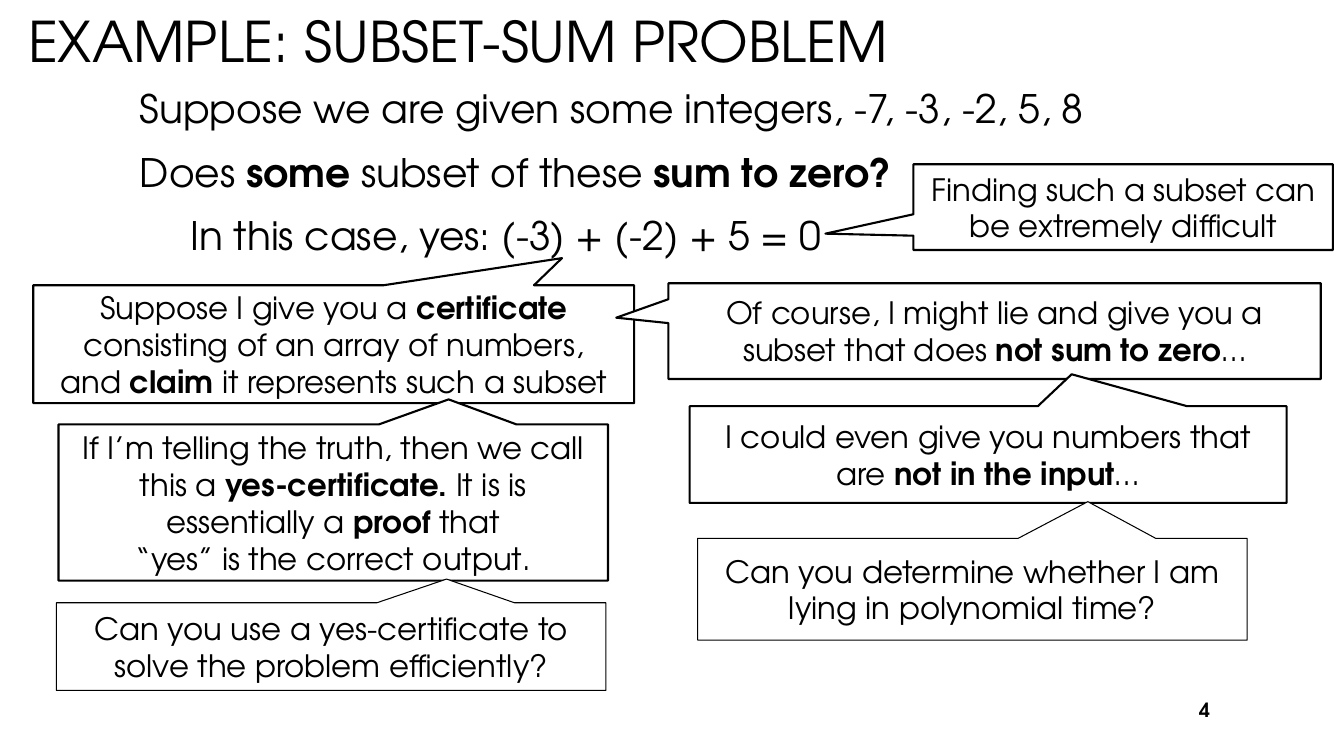
from pptx import Presentation
from pptx.dml.color import RGBColor
from pptx.enum.shapes import MSO_SHAPE
from pptx.enum.text import MSO_ANCHOR, PP_ALIGN
from pptx.util import Inches, Pt

BLACK = RGBColor(0x00, 0x00, 0x00)
WHITE = RGBColor(0xFF, 0xFF, 0xFF)
FONT = "TeX Gyre Adventor"
CALLOUT = MSO_SHAPE.RECTANGULAR_CALLOUT
TOP, MIDDLE = MSO_ANCHOR.TOP, MSO_ANCHOR.MIDDLE
LEFT, CENTER, RIGHT = PP_ALIGN.LEFT, PP_ALIGN.CENTER, PP_ALIGN.RIGHT


def write(p, text, size, align=LEFT):
    """Fill a paragraph; ** switches bold on and off, a newline breaks the line."""
    p.alignment = align
    for i, part in enumerate(text.split("**")):
        for j, line in enumerate(part.split("\n")):
            if j:
                p.add_line_break()
            if line:
                r = p.add_run()
                r.text = line
                style = {"name": FONT, "size": Pt(size), "bold": i % 2 == 1}
                for name, value in style.items():
                    setattr(r.font, name, value)
                r.font.color.rgb = BLACK


def add_text_frame(box, anchor):
    sp = s.shapes.add_textbox(*map(Inches, box))
    tf = sp.text_frame
    tf.word_wrap = True
    tf.vertical_anchor = anchor
    return tf


prs = Presentation()
prs.slide_width, prs.slide_height = Inches(13.33), Inches(7.5)
s = prs.slides.add_slide(prs.slide_layouts[6])

# Title
tf = add_text_frame((0.18, 0, 13.04, 0.79), MIDDLE)
write(tf.paragraphs[0], "EXAMPLE: SUBSET-SUM PROBLEM", 40)

# Problem statement, with the answer indented
tf = add_text_frame((0.98, 0.79, 10.83, 2.3), TOP)
statement = [
    ("Suppose we are given some integers, -7, -3, -2, 5, 8", 0.31),
    ("Does **some** subset of these **sum to zero?**", 0.31),
    ("In this case, yes: (-3) + (-2) + 5 = 0", 0.81),
]
for i, (text, indent) in enumerate(statement):
    p = tf.add_paragraph() if i else tf.paragraphs[0]
    p.space_before, p.space_after = Pt(5.6), Pt(6)
    p._p.get_or_add_pPr().set("marL", str(Inches(indent)))
    write(p, text, 28)

# Callouts: box, pointer tip relative to the centre, line width, text
callouts = [
    ((0.33, 2.83, 5.96, 1.17), (0.38, -0.73), 1.5,
     "Suppose I give you a **certificate** consisting of an array of numbers,\n"
     "and **claim** it represents such a subset"),
    ((6.63, 2.81, 6.47, 0.95), (-0.58, -0.14), 1.5,
     "Of course, I might lie and give you a subset that does **not sum to zero**…"),
    ((0.58, 4.21, 5.45, 1.55), (0.21, -0.66), 1.5,
     "If I’m telling the truth, then we call this a **yes-certificate. **It is is "
     "essentially a **proof **that\n“yes” is the correct output."),
    ((6.84, 4.03, 5.92, 0.96), (0.14, -0.83), 1.5,
     "I could even give you numbers that are **not in the input**…"),
    ((9.06, 1.63, 4.16, 0.85), (-0.71, 0.31), 1.5,
     "Finding such a subset can be extremely difficult"),
    ((0.56, 5.98, 5.45, 0.87), (0.21, -0.77), 0.75,
     "Can you use a yes-certificate to solve the problem efficiently?"),
    ((6.92, 5.34, 5.45, 1.01), (0.21, -0.86), 0.75,
     "Can you determine whether I am lying in polynomial time?"),
]
for box, tip, width, text in callouts:
    sp = s.shapes.add_shape(CALLOUT, *map(Inches, box))
    sp.adjustments[0], sp.adjustments[1] = tip
    sp.shadow.inherit = False
    sp.fill.solid()
    sp.fill.fore_color.rgb = WHITE
    sp.line.color.rgb = BLACK
    sp.line.width = Pt(width)
    tf = sp.text_frame
    tf.word_wrap = True
    tf.vertical_anchor = MIDDLE
    write(tf.paragraphs[0], text, 22, CENTER)

# Slide number
tf = add_text_frame((11.5, 6.84, 0.6, 0.4), MIDDLE)
write(tf.paragraphs[0], "**4**", 14, RIGHT)

prs.save("out.pptx")
